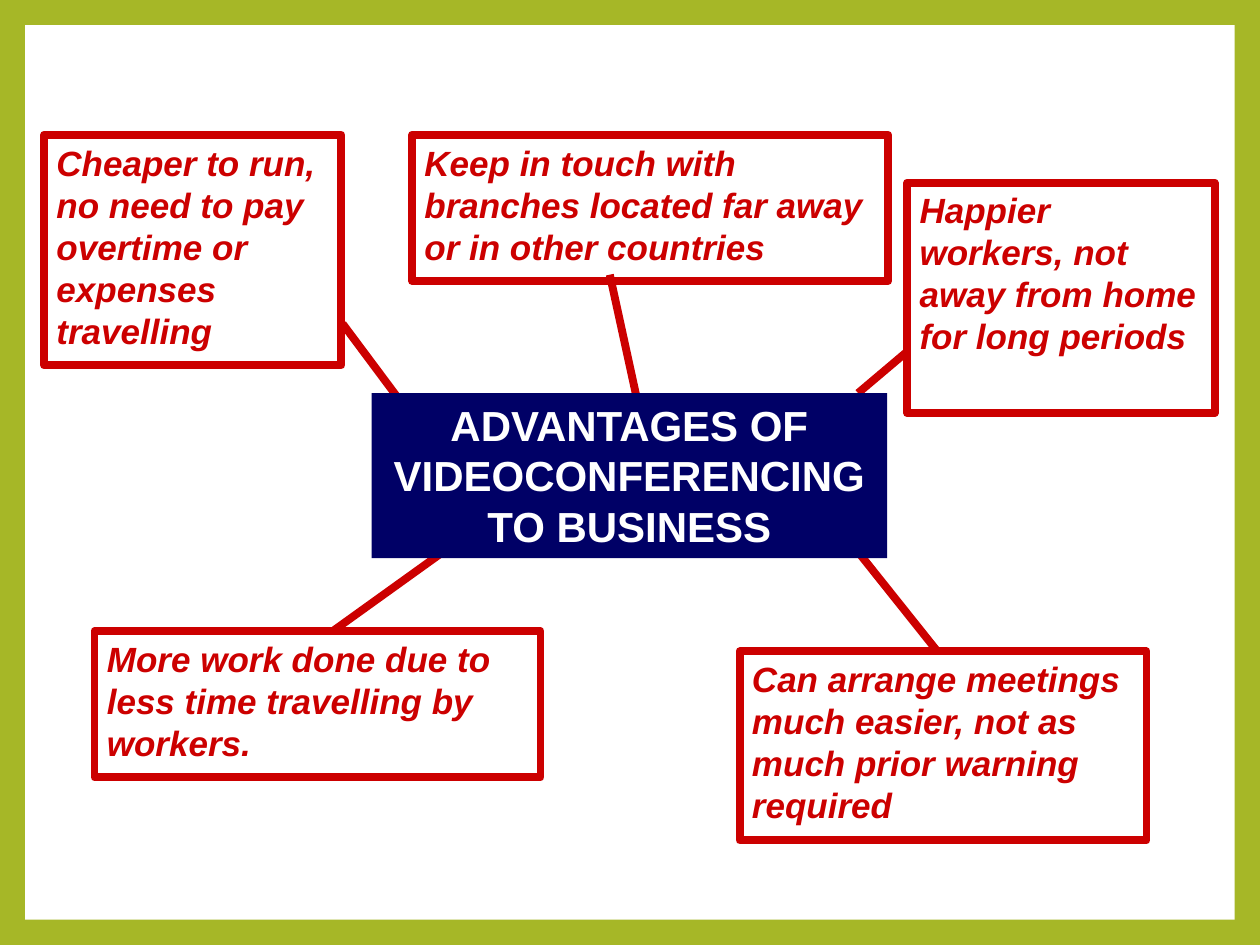
from pptx import Presentation
from pptx.dml.color import RGBColor
from pptx.enum.shapes import MSO_CONNECTOR, MSO_SHAPE
from pptx.enum.text import MSO_ANCHOR, MSO_AUTO_SIZE, PP_ALIGN
from pptx.oxml.ns import qn
from pptx.util import Inches, Pt
from lxml.etree import SubElement

GREEN = RGBColor(0xA6, 0xB7, 0x27)
WHITE = RGBColor(0xFF, 0xFF, 0xFF)
RED = RGBColor(0xCC, 0x00, 0x00)
NAVY = RGBColor(0x00, 0x00, 0x66)


class MindMap:
    font = "Arial"
    line_width = Pt(4.5)
    note_format = {"size": Pt(20), "bold": True, "italic": True}
    title_format = {"size": Pt(24), "bold": True, "italic": False}

    def __init__(self, slide):
        self.slide = slide
        fill = slide.background.fill
        fill.solid()
        fill.fore_color.rgb = GREEN

    def style_line(self, line):
        line.color.rgb = RED
        line.width = self.line_width

    def set_text(self, sp, text, color, align, fmt):
        tf = sp.text_frame
        for name, value in {"word_wrap": True, "auto_size": MSO_AUTO_SIZE.NONE,
                            "vertical_anchor": MSO_ANCHOR.TOP}.items():
            setattr(tf, name, value)
        p = tf.paragraphs[0]
        p.alignment = align
        r = p.add_run()
        r.text = text
        r.font.name = self.font
        r.font.color.rgb = color
        for name, value in fmt.items():
            setattr(r.font, name, value)

    def rectangle(self, box):
        sp = self.slide.shapes.add_shape(MSO_SHAPE.RECTANGLE, *map(Inches, box))
        sp.shadow.inherit = False
        return sp

    def panel(self, *box):
        sp = self.rectangle(box)
        sp.fill.solid()
        sp.fill.fore_color.rgb = WHITE
        sp.line.fill.background()

    def note(self, text, *box):
        sp = self.rectangle(box)
        sp.fill.background()
        self.style_line(sp.line)
        self.set_text(sp, text, RED, PP_ALIGN.LEFT, self.note_format)

    def link(self, *ends):
        cxn = self.slide.shapes.add_connector(MSO_CONNECTOR.STRAIGHT, *map(Inches, ends))
        self.style_line(cxn.line)
        SubElement(cxn._element.spPr, qn("a:effectLst"))

    def title(self, text, *box):
        sp = self.slide.shapes.title
        sp.left, sp.top, sp.width, sp.height = map(Inches, box)
        sp.fill.solid()
        sp.fill.fore_color.rgb = NAVY
        self.set_text(sp, text, WHITE, PP_ALIGN.CENTER, self.title_format)
        # Bring to front, over the ends of the links
        self.slide.shapes._spTree.append(sp._element)


def main():
    prs = Presentation()
    prs.slide_width, prs.slide_height = Inches(10), Inches(7.5)
    mind_map = MindMap(prs.slides.add_slide(prs.slide_layouts[5]))

    # White panel inside the green border
    mind_map.panel(0.2, 0.2, 9.6, 7.1)

    # Advantages: text, box, link from the centre
    advantages = [
        ("Cheaper to run, no need to pay overtime or expenses travelling",
         (0.35, 1.07, 2.36, 1.83), (3.19, 3.2, 2.72, 2.57)),
        ("More work done due to less time travelling by workers.",
         (0.75, 5.01, 3.54, 1.16), (3.74, 4.22, 2.64, 5.01)),
        ("Happier workers, not away from home for long periods",
         (7.2, 1.45, 2.44, 1.83), (6.81, 3.12, 7.2, 2.79)),
        ("Can arrange meetings much easier, not as much prior warning required",
         (5.87, 5.17, 3.23, 1.5), (6.81, 4.38, 7.44, 5.17)),
        ("Keep in touch with branches located far away or in other countries",
         (3.27, 1.07, 3.78, 1.16), (5.08, 3.28, 4.84, 2.18)),
    ]
    for text, box, ends in advantages:
        mind_map.note(text, *box)
        mind_map.link(*ends)

    # Central topic
    mind_map.title("ADVANTAGES OF VIDEOCONFERENCING TO BUSINESS", 2.95, 3.12, 4.09, 1.31)

    prs.save("out.pptx")


if __name__ == "__main__":
    main()
